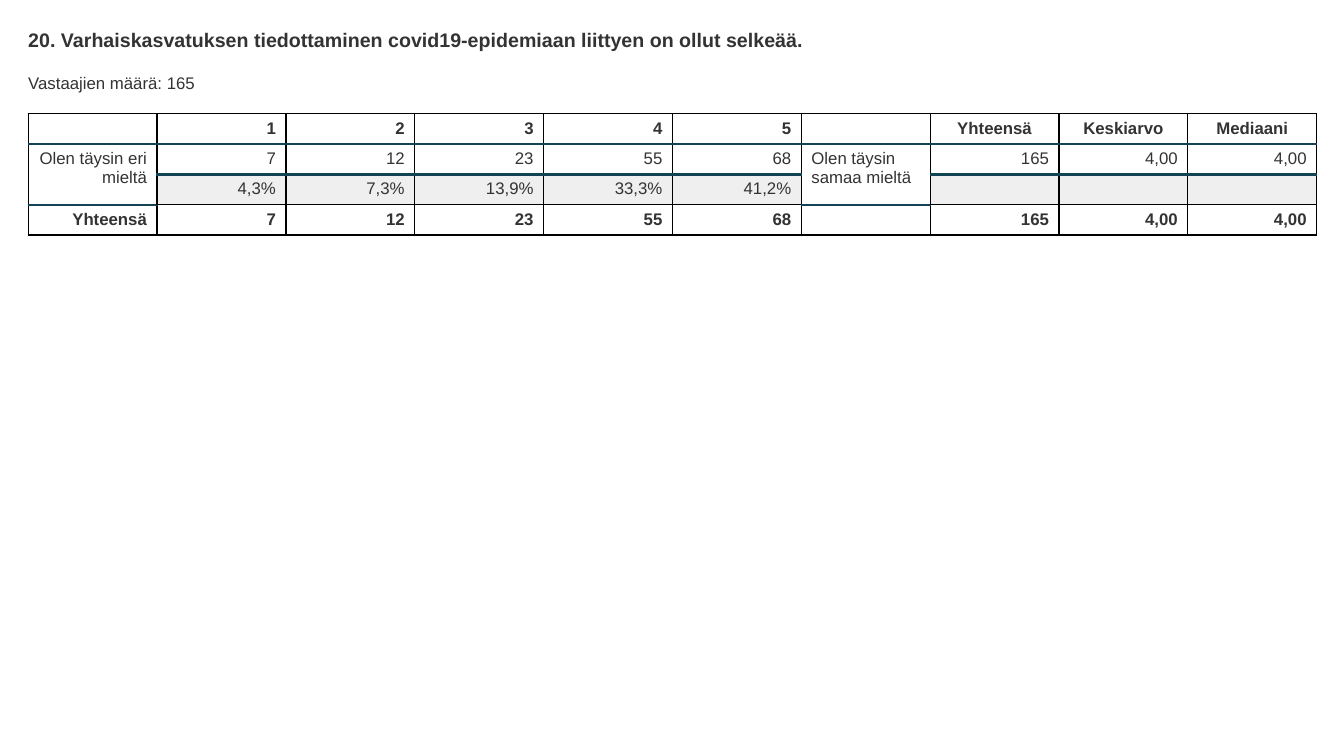
"""Build the survey result slide for question 20."""
from lxml.etree import SubElement
from pptx import Presentation
from pptx.dml.color import RGBColor
from pptx.enum.text import MSO_ANCHOR, PP_ALIGN
from pptx.oxml.ns import qn
from pptx.util import Inches, Pt

INK, TEAL, BLACK, SHADE, WHITE = "333333", "124456", "000000", "EFEFEF", "FFFFFF"
MARGIN, WIDTH, ROW_HEIGHT = 0.28, 12.78, 0.3


def add_text(paragraph, text, size=12, bold=False, align=PP_ALIGN.LEFT):
    paragraph.alignment = align
    run = paragraph.add_run()
    run.text = text
    run.font.name = "Arial"
    run.font.size = Pt(size)
    run.font.bold = bold
    run.font.color.rgb = RGBColor.from_string(INK)


def add_border(cell, side, color, points):
    line = SubElement(cell._tc.get_or_add_tcPr(), qn(f"a:{side}"), w=str(Pt(points)))
    SubElement(SubElement(line, qn("a:solidFill")), qn("a:srgbClr"), val=color)


presentation = Presentation()
presentation.slide_width = Inches(13.33)
presentation.slide_height = Inches(7.5)
slide = presentation.slides.add_slide(presentation.slide_layouts[5])

question = slide.shapes.title
question.left, question.top = Inches(MARGIN), Inches(0.28)
question.width, question.height = Inches(WIDTH), Inches(0.23)
respondents = slide.shapes.add_textbox(
    Inches(MARGIN), Inches(0.72), Inches(WIDTH), Inches(0.2))
headings = [
    (question, "20. Varhaiskasvatuksen tiedottaminen covid19-epidemiaan liittyen on ollut selkeää.", 14, True),
    (respondents, "Vastaajien määrä: 165", 12, False),
]
for heading, text, size, bold in headings:
    frame = heading.text_frame
    frame.margin_left = frame.margin_right = frame.margin_top = frame.margin_bottom = 0
    frame.word_wrap = True
    frame.vertical_anchor = MSO_ANCHOR.TOP
    add_text(frame.paragraphs[0], text, size, bold)

answers = [
    ["", "1", "2", "3", "4", "5", "", "Yhteensä", "Keskiarvo", "Mediaani"],
    ["Olen täysin eri mieltä", "7", "12", "23", "55", "68",
     "Olen täysin samaa mieltä", "165", "4,00", "4,00"],
    ["", "4,3%", "7,3%", "13,9%", "33,3%", "41,2%", "", "", "", ""],
    ["Yhteensä", "7", "12", "23", "55", "68", "", "165", "4,00", "4,00"],
]
HEADER, COUNTS, SHARES, TOTALS = range(4)
LEFT_LABEL, RIGHT_LABEL = 0, 6

results = slide.shapes.add_table(
    len(answers), len(answers[0]), Inches(MARGIN), Inches(1.13),
    Inches(WIDTH), Inches(ROW_HEIGHT * len(answers))).table
results.first_row = results.horz_banding = False
for row in results.rows:
    row.height = Inches(ROW_HEIGHT)
for label in (LEFT_LABEL, RIGHT_LABEL):
    results.cell(COUNTS, label).merge(results.cell(SHARES, label))

for r, answer_row in enumerate(answers):
    for c, text in enumerate(answer_row):
        cell = results.cell(r, c)
        is_label = c in (LEFT_LABEL, RIGHT_LABEL)
        last_teal = SHARES if is_label else COUNTS
        add_border(cell, "lnL", BLACK, 1)
        add_border(cell, "lnR", BLACK, 1)
        for side, row_above in (("lnT", r - 1), ("lnB", r)):
            is_teal = HEADER <= row_above <= last_teal
            add_border(cell, side, TEAL if is_teal else BLACK, 2 if is_teal else 1)
        cell.fill.solid()
        shaded = r == SHARES and not is_label
        cell.fill.fore_color.rgb = RGBColor.from_string(SHADE if shaded else WHITE)

        align = PP_ALIGN.RIGHT
        if c == RIGHT_LABEL:
            align = PP_ALIGN.LEFT
        elif r == HEADER and c > RIGHT_LABEL:
            align = PP_ALIGN.CENTER
        paragraph = cell.text_frame.paragraphs[0]
        if text:
            add_text(paragraph, text, bold=r in (HEADER, TOTALS), align=align)
        else:
            SubElement(paragraph._p, qn("a:endParaRPr"), sz="1200")

presentation.save("out.pptx")
